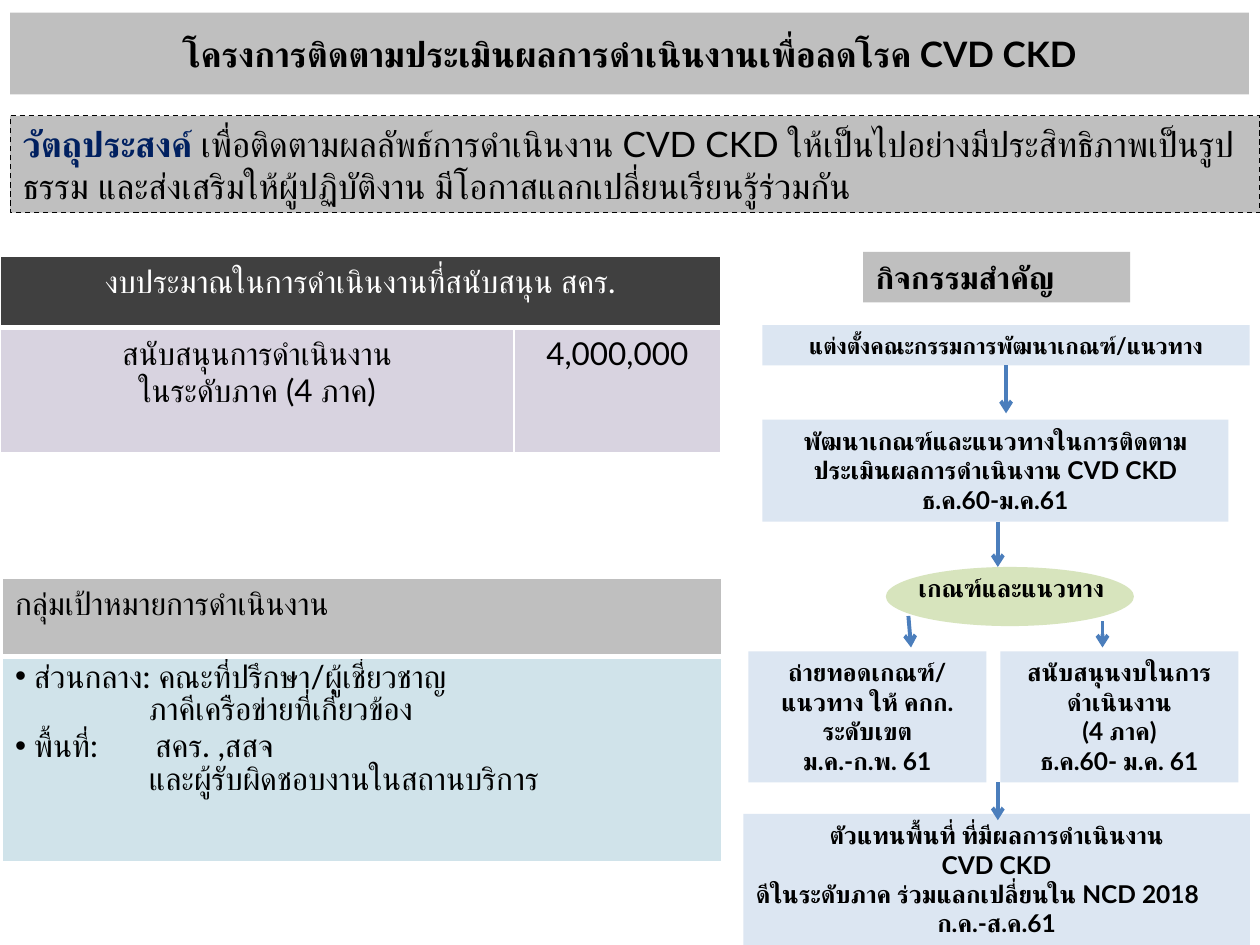
from pptx import Presentation
from pptx.dml.color import RGBColor
from pptx.enum.dml import MSO_LINE
from pptx.enum.shapes import MSO_CONNECTOR, MSO_SHAPE
from pptx.enum.text import MSO_ANCHOR, PP_ALIGN
from pptx.oxml.ns import qn
from pptx.util import Pt
from lxml.etree import SubElement

FONT = "Lato"
BLACK = RGBColor(0x00, 0x00, 0x00)
WHITE = RGBColor(0xFF, 0xFF, 0xFF)
NAVY = RGBColor(0x00, 0x20, 0x60)
GREY = RGBColor(0xBF, 0xBF, 0xBF)
CHARCOAL = RGBColor(0x40, 0x40, 0x40)
LILAC = RGBColor(0xD8, 0xD3, 0xE0)
AQUA = RGBColor(0xD0, 0xE3, 0xEA)
PALE_BLUE = RGBColor(0xDC, 0xE6, 0xF2)
GREEN = RGBColor(0xD7, 0xE4, 0xBD)
ARROW_BLUE = RGBColor(0x4B, 0x7E, 0xBC)

LEFT, CENTER = PP_ALIGN.LEFT, PP_ALIGN.CENTER


def write(frame, lines, size=14, color=BLACK, bold=False, align=CENTER,
          anchor=MSO_ANCHOR.TOP):
    """Write one paragraph per line; a line is a string or (text, color, bold) spans."""
    frame.word_wrap = True
    frame.vertical_anchor = anchor
    for number, line in enumerate(lines):
        para = frame.paragraphs[0] if number == 0 else frame.add_paragraph()
        para.alignment = align
        spans = [(line, color, bold)] if isinstance(line, str) else line
        for text, span_color, span_bold in spans:
            span = para.add_run()
            span.text = text
            span.font.name = FONT
            span.font.size = Pt(size)
            span.font.bold = span_bold
            span.font.color.rgb = span_color
            SubElement(span.font._element, qn("a:cs"), typeface=FONT)


def add_box(page, left, top, width, height, fill, lines=(), kind=MSO_SHAPE.RECTANGLE,
            **text_format):
    box = page.shapes.add_shape(kind, Pt(left), Pt(top), Pt(width), Pt(height))
    box.shadow.inherit = False
    box.fill.solid()
    box.fill.fore_color.rgb = fill
    box.line.fill.background()
    write(box.text_frame, lines, **text_format)
    return box


def add_arrow(page, x1, y1, x2, y2):
    arrow = page.shapes.add_connector(MSO_CONNECTOR.STRAIGHT, Pt(x1), Pt(y1), Pt(x2), Pt(y2))
    arrow.line.color.rgb = ARROW_BLUE
    arrow.line.width = Pt(2.25)
    SubElement(arrow.line._get_or_add_ln(), qn("a:tailEnd"), type="arrow")
    SubElement(arrow._element.spPr, qn("a:effectLst"))
    return arrow


def add_grid(page, left, top, columns, rows):
    table = page.shapes.add_table(len(rows), len(columns), Pt(left), Pt(top),
                                  Pt(sum(columns)), Pt(sum(rows))).table
    for column, width in zip(table.columns, columns):
        column.width = Pt(width)
    for row, height in zip(table.rows, rows):
        row.height = Pt(height)
    return table


def fill_cell(cell, fill, lines, bottom=1, **text_format):
    """Give a cell white borders, a fill and its text."""
    properties = cell._tc.get_or_add_tcPr()
    for side, width in (("L", 1), ("R", 1), ("T", 1), ("B", bottom)):
        border = SubElement(properties, qn(f"a:ln{side}"), w=str(Pt(width)))
        solid = SubElement(border, qn("a:solidFill"))
        SubElement(solid, qn("a:srgbClr"), val=str(WHITE))
    cell.fill.solid()
    cell.fill.fore_color.rgb = fill
    write(cell.text_frame, lines, size=18, **text_format)


def format_list(paragraphs, hanging=10.8, detail=76.5, tab=80):
    """Alternate bulleted groups with indented detail lines."""
    for number, para in enumerate(paragraphs):
        para.line_spacing = 0.85
        properties = para._p.get_or_add_pPr()
        if number % 2:
            properties.set("marL", str(Pt(detail)))
            properties.set("indent", "0")
        else:
            para.space_before = Pt(3)
            properties.set("marL", str(Pt(hanging)))
            properties.set("indent", str(-Pt(hanging)))
            SubElement(properties, qn("a:buFont"), typeface="Arial")
            SubElement(properties, qn("a:buChar"), char="•")
            stops = SubElement(properties, qn("a:tabLst"))
            SubElement(stops, qn("a:tab"), pos=str(Pt(tab)), algn="l")


def add_heading(page):
    title = page.shapes.title
    title.left, title.top, title.width, title.height = Pt(5.8), Pt(7.2), Pt(707.8), Pt(46.8)
    title.fill.solid()
    title.fill.fore_color.rgb = GREY
    write(title.text_frame, ["โครงการติดตามประเมินผลการดำเนินงานเพื่อลดโรค CVD CKD"],
          size=20, bold=True, anchor=MSO_ANCHOR.MIDDLE)

    objective = add_box(page, 5.8, 66.2, 714.2, 55.4, GREY, [[
        ("วัตถุประสงค์ ", NAVY, True),
        ("เพื่อติดตามผลลัพธ์การดำเนินงาน CVD CKD ให้เป็นไปอย่างมีประสิทธิภาพเป็นรูปธรรม "
         "และส่งเสริมให้ผู้ปฏิบัติงาน มีโอกาสแลกเปลี่ยนเรียนรู้ร่วมกัน", BLACK, False),
    ]], size=20, align=LEFT)
    objective.line.color.rgb = BLACK
    objective.line.width = Pt(0.75)
    objective.line.dash_style = MSO_LINE.DASH


def add_tables(page):
    # Budget
    budget = add_grid(page, 0, 146.2, [293.8, 118], [41, 71.3])
    budget.cell(0, 0).merge(budget.cell(0, 1))
    fill_cell(budget.cell(0, 0), CHARCOAL, ["งบประมาณในการดำเนินงานที่สนับสนุน สคร."],
              bottom=3, color=WHITE)
    fill_cell(budget.cell(1, 0), LILAC, ["สนับสนุนการดำเนินงาน", "ในระดับภาค (4 ภาค)"])
    fill_cell(budget.cell(1, 1), LILAC, ["4,000,000"])

    # Target groups
    targets = add_grid(page, 1.4, 330.5, [411.1], [44.6, 117.4])
    fill_cell(targets.cell(0, 0), GREY, ["กลุ่มเป้าหมายการดำเนินงาน"], bottom=3, align=LEFT)
    groups = targets.cell(1, 0)
    fill_cell(groups, AQUA, [
        "ส่วนกลาง: คณะที่ปรึกษา/ผู้เชี่ยวชาญ",
        "ภาคีเครือข่ายที่เกี่ยวข้อง",
        "พื้นที่:\tสคร. ,สสจ",
        "และผู้รับผิดชอบงานในสถานบริการ",
    ], align=LEFT)
    format_list(groups.text_frame.paragraphs)


def add_activities(page):
    add_box(page, 493.2, 144, 152.6, 28.8, GREY, ["กิจกรรมสำคัญ"],
            size=18, bold=True, align=LEFT)

    # Steps from top to bottom
    appoint = add_box(page, 435.6, 185.8, 278.6, 23, PALE_BLUE,
                      ["แต่งตั้งคณะกรรมการพัฒนาเกณฑ์/แนวทาง"], size=13, bold=True)
    add_box(page, 435.6, 239.8, 266.4, 58.3, PALE_BLUE, [
        "พัฒนาเกณฑ์และแนวทางในการติดตามประเมินผลการดำเนินงาน CVD CKD",
        "ธ.ค.60-ม.ค.61"], bold=True)
    add_box(page, 506.2, 324, 141.8, 33.8, GREEN, kind=MSO_SHAPE.OVAL)
    label = page.shapes.add_textbox(Pt(509.8), Pt(324), Pt(136), Pt(24.5))
    write(label.text_frame, ["เกณฑ์และแนวทาง"], bold=True)

    branches = [
        ["ถ่ายทอดเกณฑ์/แนวทาง ให้ คกก. ระดับเขต", "ม.ค.-ก.พ. 61"],
        ["สนับสนุนงบในการดำเนินงาน", "(4 ภาค)", "ธ.ค.60- ม.ค. 61"],
    ]
    for number, lines in enumerate(branches):
        add_box(page, 427.7 + 144 * number, 372.2, 136, 74.9, PALE_BLUE, lines, bold=True)

    sharing = add_box(page, 424.8, 465.1, 289.4, 74.9, PALE_BLUE, [
        "ตัวแทนพื้นที่ ที่มีผลการดำเนินงาน", "CVD CKD",
        "ดีในระดับภาค ร่วมแลกเปลี่ยนใน NCD 2018", "ก.ค.-ส.ค.61"], bold=True)
    sharing.text_frame.paragraphs[2].alignment = LEFT

    # Arrows between the steps
    add_arrow(page, 574.9, 208.8, 574.9, 236.2).begin_connect(appoint, 2)
    for ends in [(570.2, 298.1, 570.2, 324), (570.2, 447.1, 570.2, 468.7),
                 (630, 355, 630, 370), (519.1, 352, 520.6, 370)]:
        add_arrow(page, *ends)


def main():
    deck = Presentation()
    deck.slide_width, deck.slide_height = Pt(720), Pt(540)
    page = deck.slides.add_slide(deck.slide_layouts[5])
    add_heading(page)
    add_tables(page)
    add_activities(page)
    deck.save("out.pptx")


if __name__ == "__main__":
    main()
